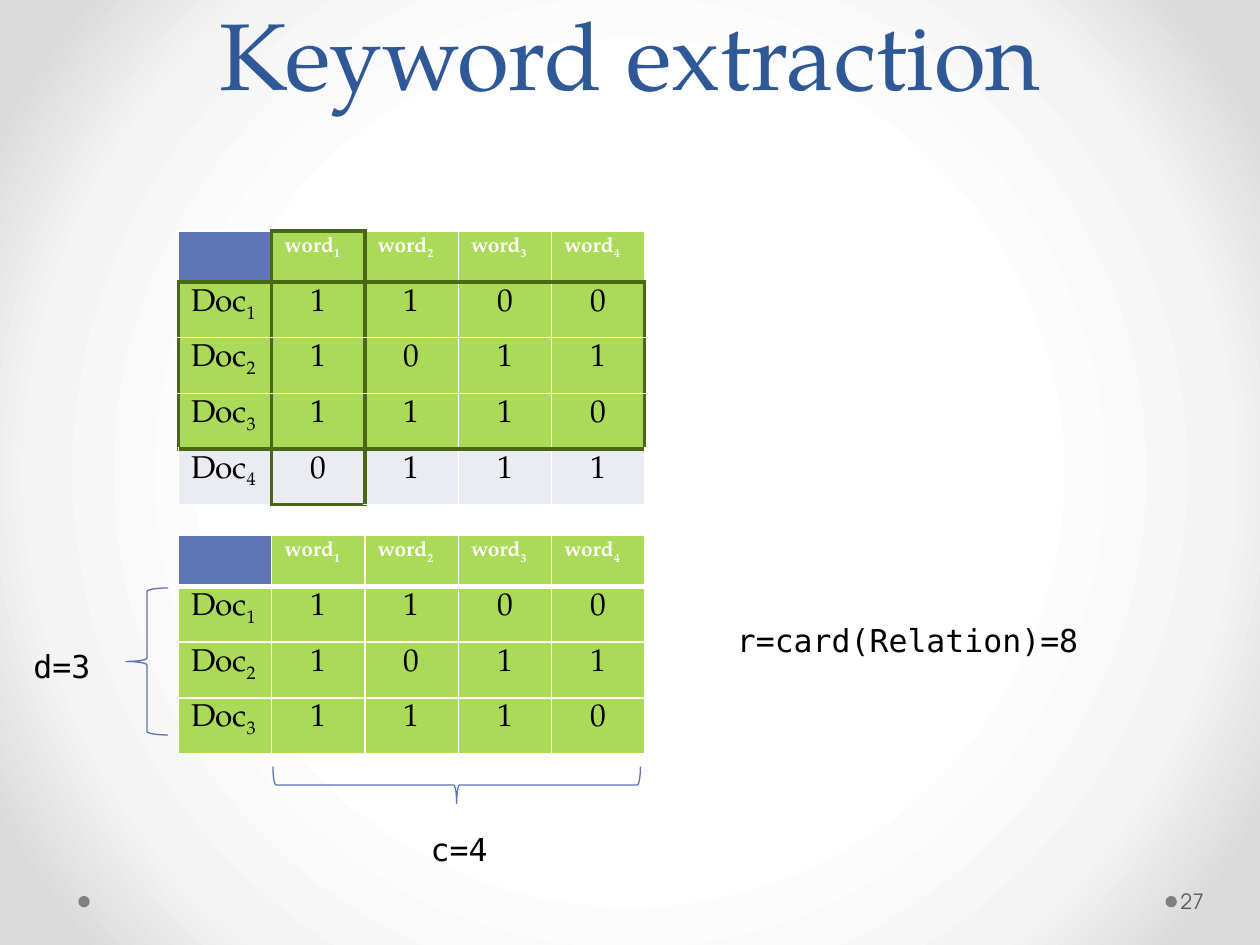
from pptx import Presentation
from pptx.dml.color import RGBColor as Rgb
from pptx.enum.shapes import MSO_SHAPE as Kind
from pptx.enum.text import MSO_ANCHOR as Anchor, MSO_AUTO_SIZE as Auto, PP_ALIGN as Align
from pptx.oxml import parse_xml
from pptx.oxml.ns import nsdecls, qn
from pptx.util import Pt

SERIF, SANS, MONO = "TeX Gyre Pagella", "TeX Gyre Adventor", "DejaVu Sans Mono"
WHITE, BLACK, GREEN, BLUE, PALE, DARK = "FFFFFF", "000000", "ABD958", "6076B4", "EAECF2", "4A6717"
HEAD = {"name": SERIF, "size": Pt(12), "bold": True}
BODY = {"name": SERIF, "size": Pt(18), "bold": False}
CODE = {"name": MONO, "size": Pt(18)}
FIT = {"word_wrap": False, "auto_size": Auto.SHAPE_TO_FIT_TEXT}
BITS = ["1100", "1011", "1110", "0111"]


def put(item, vals):
    for key, val in vals.items():
        setattr(item, key, val)


def paint(part, color):
    part.solid()
    part.fore_color.rgb = Rgb.from_string(color)


def write(frame, text, font, color, para=None, sub=""):
    line = frame.paragraphs[0]
    put(line, para or {})
    for word, low in ((text, False), (sub, True)):
        if word:
            run = line.add_run()
            run.text = word
            put(run.font, font)
            paint(run.font.fill, color)
            if low:
                run._r.get_or_add_rPr().set("baseline", "-25000")


def label(slide, box, text, font, color, frame, para=None):
    area = slide.shapes.add_textbox(*map(Pt, box)).text_frame
    put(area, frame)
    write(area, text, font, color, para)


def shape(slide, kind, box):
    item = slide.shapes.add_shape(kind, *map(Pt, box))
    item.shadow.inherit = False
    return item


def dot(slide, left):
    item = shape(slide, Kind.OVAL, (left, 512, 6.5, 6.5))
    paint(item.fill, "808080")
    item.line.fill.background()


def brace(slide, box, turn=0):
    item = shape(slide, Kind.LEFT_BRACE, box)
    item.rotation = turn
    item.fill.background()
    paint(item.line.fill, "5C72B2")
    item.line.width = Pt(0.75)


def frames(side, row, col):
    if side in "LR":
        edge = col + (side == "R")
        bold = edge in (1, 2) or edge in (0, 5) and row in (1, 2, 3)
    else:
        edge = row + (side == "B")
        bold = edge in (1, 4) or edge in (0, 5) and col == 1
    return (DARK, 2.25) if bold else (WHITE, 1)


def plain(side, row, col):
    return WHITE, 3 if side == "B" and row == 0 else 1


def border(cell, row, col, rule):
    props = cell._tc.get_or_add_tcPr()
    for spot, side in enumerate("LRTB"):
        color, width = rule(side, row, col)
        props.insert(spot, parse_xml(
            f'<a:ln{side} {nsdecls("a")} w="{int(Pt(width))}"><a:solidFill>'
            f'<a:srgbClr val="{color}"/></a:solidFill></a:ln{side}>'))


def matrix(slide, top, bits, rule):
    rows, cols = len(bits) + 1, 5
    wide, high = 53.3, 29.2
    table = slide.shapes.add_table(rows, cols, Pt(102), Pt(top), Pt(wide * cols), Pt(high * rows)).table
    table.horz_banding = False
    for col in table.columns:
        col.width = Pt(wide)
    for row in table.rows:
        row.height = Pt(high)
    for row in range(rows):
        for col in range(cols):
            cell = table.cell(row, col)
            paint(cell.fill, PALE if row == 4 else GREEN if row or col else BLUE)
            border(cell, row, col, rule)
            if row and col:
                write(cell.text_frame, bits[row - 1][col - 1], BODY, BLACK, {"alignment": Align.CENTER})
            elif row:
                write(cell.text_frame, "Doc", BODY, BLACK, sub=str(row))
            elif col:
                write(cell.text_frame, "word", HEAD, WHITE, sub=str(col))


def glow(slide, stops):
    slide.background.fill.solid()
    props = slide.element.find(".//" + qn("p:bgPr"))
    marks = "".join(f'<a:gs pos="{pos * 1000}"><a:srgbClr val="{color}"/></a:gs>' for pos, color in stops)
    props.replace(props[0], parse_xml(
        f'<a:gradFill {nsdecls("a")} rotWithShape="1"><a:gsLst>{marks}</a:gsLst><a:path path="circle">'
        '<a:fillToRect l="50000" t="50000" r="50000" b="50000"/></a:path></a:gradFill>'))


def main():
    deck = Presentation()
    put(deck, {"slide_width": Pt(720), "slide_height": Pt(540)})
    slide = deck.slides.add_slide(deck.slide_layouts[6])
    glow(slide, [(50, WHITE), (76, "F4F4F4"), (92, "DADADA")])
    dot(slide, 666)
    dot(slide, 44.8)
    label(slide, (36, 0, 648, 66), "Keyword extraction", {"name": SERIF, "size": Pt(54)}, "2F5897",
          {"word_wrap": True, "vertical_anchor": Anchor.BOTTOM},
          {"alignment": Align.CENTER, "line_spacing": Pt(58)})
    label(slide, (672.5, 500.5, 44, 28.8), "27", {"name": SANS, "size": Pt(12)}, "595959",
          {"word_wrap": True, "vertical_anchor": Anchor.MIDDLE, "margin_left": Pt(2.2), "margin_right": Pt(3.6)})
    matrix(slide, 132, BITS, frames)
    matrix(slide, 306, BITS[:3], plain)
    brace(slide, (72, 336, 24, 84))
    brace(slide, (250.5, 343.5, 21, 210), 270)
    for text, left, top, wide in (("d=3", 12, 366, 47), ("c=4", 239, 471, 47),
                                  ("r=card(Relation)=8", 414, 351.5, 210)):
        label(slide, (left, top, wide, 29), text, CODE, BLACK, FIT)
    deck.save("out.pptx")


if __name__ == "__main__":
    main()
